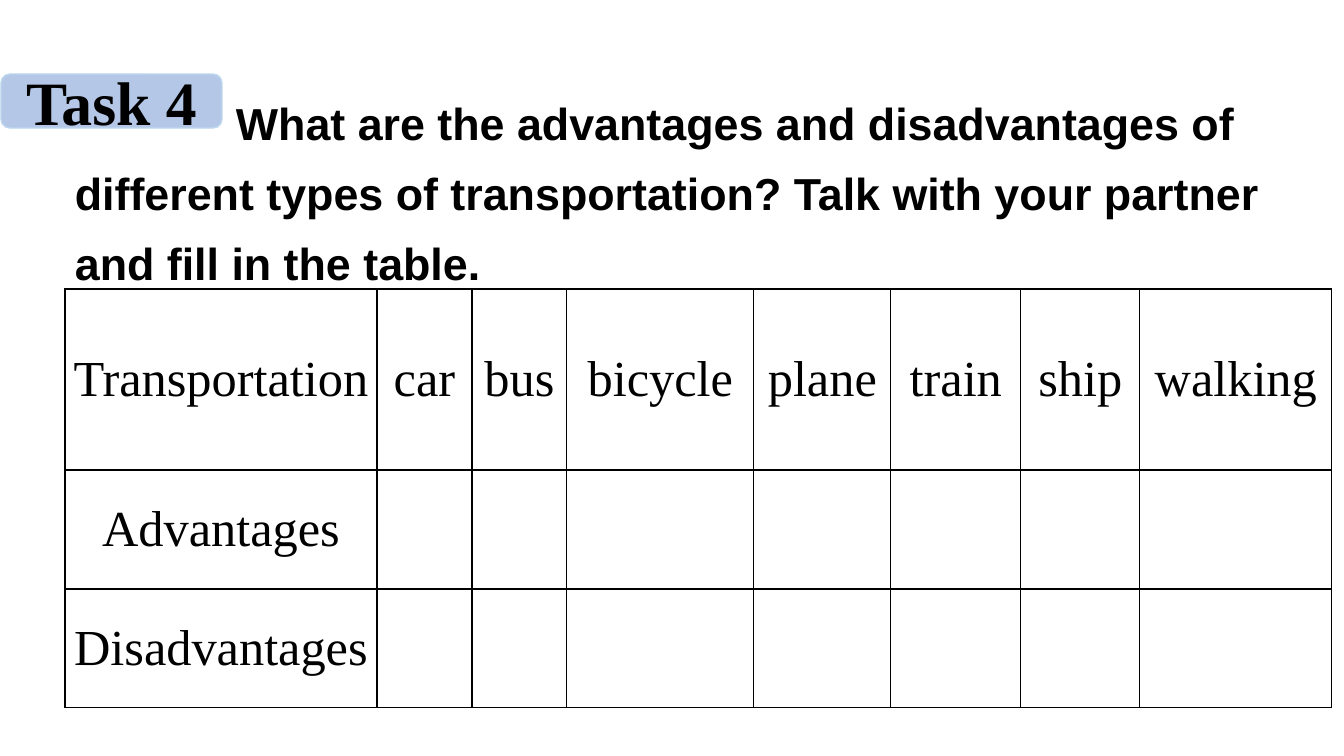
from itertools import product

from lxml import etree
from pptx import Presentation, util as u
from pptx.dml.color import RGBColor
from pptx.enum import shapes, text
from pptx.oxml.ns import qn

PX = 914400 / 100.8
COLORS = {"ink": "000000", "paper": "FFFFFF", "badge": "B4C7E7", "badge_line": "BDD7EE"}
SERIF, SANS = "Times New Roman", "Arial"

QUESTION = ("What are the advantages and disadvantages of different types of "
            "transportation? Talk with your partner and fill in the table.")
HEADINGS = ["Transportation", "car", "bus", "bicycle", "plane", "train", "ship", "walking"]
ROW_LABELS = ["Advantages", "Disadvantages"]
COLUMN_WIDTHS = [312, 95, 95, 187, 137, 130, 119, 192]
ROW_HEIGHTS = [181, 119, 119]


def px(length):
    return u.Emu(round(length * PX))


def color(name):
    return RGBColor.from_string(COLORS[name])


def write(frame, words, size, font=SERIF, bold=False, align=text.PP_ALIGN.CENTER,
          indent=0, spacing=None):
    paragraph = frame.paragraphs[0]
    paragraph.alignment = align
    if spacing:
        paragraph.line_spacing = spacing
    if indent:
        paragraph._p.get_or_add_pPr().set("indent", str(px(indent)))
    run = paragraph.add_run()
    run.text = words
    run.font.name = font
    run.font.size = u.Pt(size)
    run.font.bold = bold
    run.font.color.rgb = color("ink")


def border_cell(cell):
    properties = cell._tc.get_or_add_tcPr()
    for position, side in enumerate(("lnL", "lnR", "lnT", "lnB")):
        line = etree.Element(qn(f"a:{side}"), w=str(u.Pt(1)))
        fill = etree.SubElement(line, qn("a:solidFill"))
        etree.SubElement(fill, qn("a:srgbClr"), val=COLORS["ink"])
        properties.insert(position, line)


def add_question(slide, left, top, width, height):
    box = slide.shapes.add_textbox(px(left), px(top), px(width), px(height))
    box.text_frame.word_wrap = True
    # The first line starts to the right of the badge
    write(box.text_frame, QUESTION, 32, font=SANS, bold=True,
          align=text.PP_ALIGN.LEFT, indent=161, spacing=1.3)


def add_transport_table(slide, left, top):
    frame = slide.shapes.add_table(
        len(ROW_HEIGHTS), len(COLUMN_WIDTHS), px(left), px(top),
        px(sum(COLUMN_WIDTHS)), px(sum(ROW_HEIGHTS)))
    table = frame.table
    table.first_row = table.horz_banding = False
    for column, width in zip(table.columns, COLUMN_WIDTHS):
        column.width = px(width)
    for row, height in zip(table.rows, ROW_HEIGHTS):
        row.height = px(height)

    # Headings along the top, labels down the side, the rest left to fill in
    for row, column in product(range(len(ROW_HEIGHTS)), range(len(COLUMN_WIDTHS))):
        cell = table.cell(row, column)
        cell.fill.solid()
        cell.fill.fore_color.rgb = color("paper")
        cell.vertical_anchor = text.MSO_ANCHOR.MIDDLE
        cell.margin_left = cell.margin_right = px(7)
        cell.margin_top = cell.margin_bottom = 0
        border_cell(cell)
        if row == 0:
            write(cell.text_frame, HEADINGS[column], 36)
        elif column == 0:
            write(cell.text_frame, ROW_LABELS[row - 1], 36)


def add_badge(slide, left, top, width, height):
    badge = slide.shapes.add_shape(shapes.MSO_SHAPE.ROUNDED_RECTANGLE,
                                   px(left), px(top), px(width), px(height))
    badge.shadow.inherit = False
    badge.fill.solid()
    badge.fill.fore_color.rgb = color("badge")
    badge.line.color.rgb = color("badge_line")
    badge.line.width = u.Pt(1)
    badge.text_frame.vertical_anchor = text.MSO_ANCHOR.MIDDLE
    badge.text_frame.word_wrap = True
    write(badge.text_frame, "Task 4", 44, bold=True)


def main():
    presentation = Presentation()
    presentation.slide_width, presentation.slide_height = px(1344), px(756)
    slide = presentation.slides.add_slide(presentation.slide_layouts[6])
    add_question(slide, 65, 75, 1245, 215)
    add_transport_table(slide, 65, 289)
    add_badge(slide, 1, 74, 221, 54)
    presentation.save("out.pptx")


if __name__ == "__main__":
    main()
